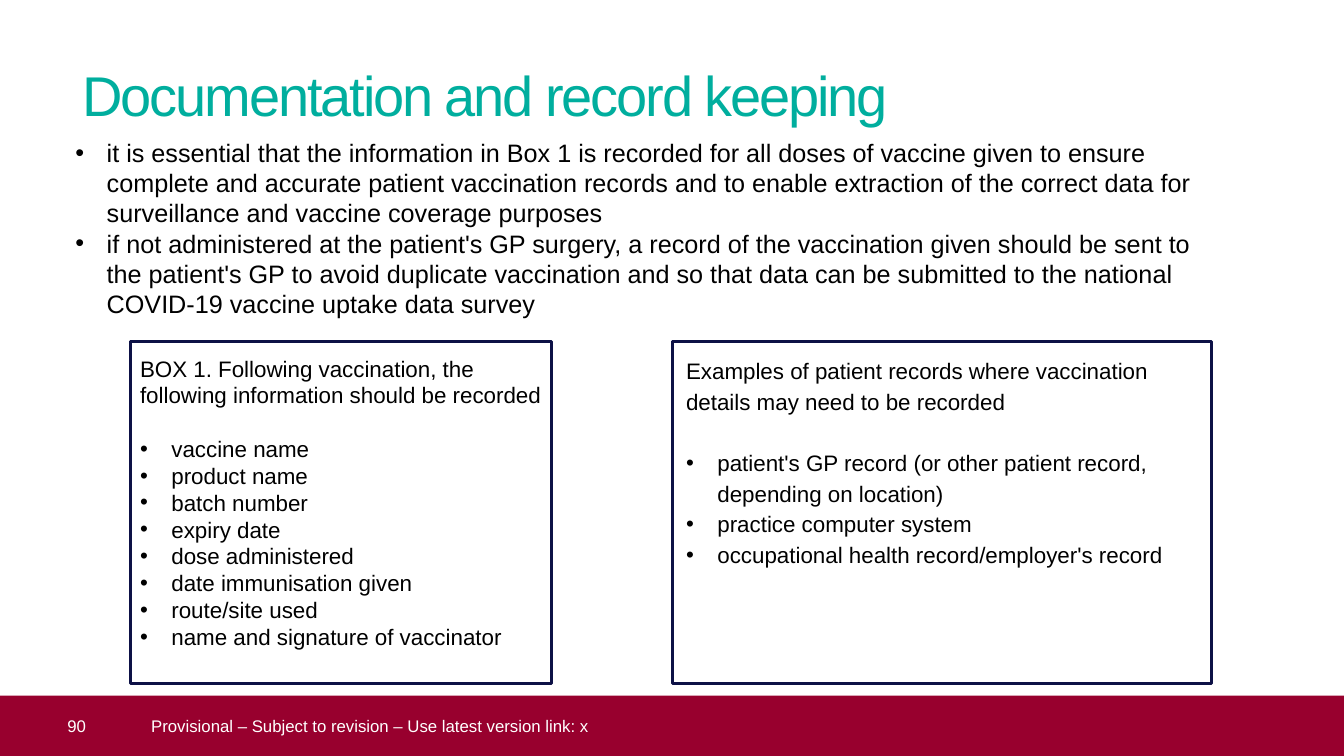
from pptx import Presentation
from pptx.dml.color import RGBColor as Rgb
from pptx.enum.shapes import MSO_SHAPE as Kind
from pptx.enum.text import MSO_ANCHOR as Anchor
from pptx.oxml.xmlchemy import OxmlElement as Node
from pptx.util import Cm, Pt

INK = "000000"
INDENT = 0.79


def color(code):
    return Rgb.from_string(code)


def frame(slide, box, pad=(0, 0)):
    text = slide.shapes.add_textbox(*map(Cm, box)).text_frame
    text.word_wrap = True
    text.margin_left = text.margin_right = Cm(pad[0])
    text.margin_top = text.margin_bottom = Cm(pad[1])
    return text


def rect(slide, box):
    shape = slide.shapes.add_shape(Kind.RECTANGLE, *map(Cm, box))
    shape.shadow.inherit = False
    return shape


def write(text, lines, size, code=INK, mark=False, space=None):
    for line in lines:
        first = text.paragraphs[0]
        para = text.add_paragraph() if first.runs else first
        para.text = line
        para.font.name = "Arial"
        para.font.size = Pt(size)
        para.font.color.rgb = color(code)
        para.line_spacing = space
        if mark:
            props = para._p.get_or_add_pPr()
            props.set("marL", str(Cm(INDENT)))
            props.set("indent", str(-Cm(INDENT)))
            face = Node("a:buFont")
            face.set("typeface", "Arial")
            dot = Node("a:buChar")
            dot.set("char", "•")
            for node in (face, dot):
                props.insert_element_before(node, "a:tabLst", "a:defRPr", "a:extLst")


def title(slide, box, words):
    text = frame(slide, box)
    write(text, [words], 40, "00AE9E")
    text.paragraphs[0].runs[0].font._element.set("spc", "-150")


def intro(slide, box, points):
    write(frame(slide, box, (0.25, 0.13)), points, 18, mark=True)


def panel(slide, box, inset, pad, head, points, gap, space=None):
    left, top, width, height = box
    text = frame(slide, (left + inset[0], top + inset[1],
                         width - inset[2], height - inset[1]), pad)
    write(text, [head], 16, space=space)
    text.paragraphs[0].space_after = Pt(gap)
    write(text, points, 16, mark=True, space=space)
    edge = rect(slide, box)
    edge.fill.background()
    edge.line.color.rgb = color("0D1146")
    edge.line.width = Pt(2)


def footer(slide, box, number, note):
    left, top, width, height = box
    bar = rect(slide, box)
    bar.fill.solid()
    bar.fill.fore_color.rgb = color("98002E")
    bar.line.fill.background()
    for start, words in ((1.7, number), (3.81, note)):
        text = frame(slide, (left + start, top, width - start, height))
        text.vertical_anchor = Anchor.MIDDLE
        write(text, [words], 12, "FFFFFF")


def main():
    deck = Presentation()
    deck.slide_width, deck.slide_height = Cm(33.87), Cm(19.05)
    slide = deck.slides.add_slide(deck.slide_layouts[6])
    title(slide, (2.08, 1.52, 29.74, 1.8), "Documentation and record keeping")
    footer(slide, (0, 17.53, 33.87, 1.52), "90",
           "Provisional – Subject to revision – Use latest version link: x")
    intro(slide, (1.65, 3.33, 28.88, 4.88), [
        "it is essential that the information in Box 1 is recorded for all doses of "
        "vaccine given to ensure complete and accurate patient vaccination records "
        "and to enable extraction of the correct data for surveillance and vaccine "
        "coverage purposes",
        "if not administered at the patient's GP surgery, a record of the vaccination "
        "given should be sent to the patient's GP to avoid duplicate vaccination and "
        "so that data can be submitted to the national COVID-19 vaccine uptake data "
        "survey",
    ])
    panel(slide, (3.28, 8.61, 10.62, 8.61), (0, 0.2, -0.07), (0.25, 0.13),
          "BOX 1. Following vaccination, the following information should be recorded",
          ["vaccine name", "product name", "batch number", "expiry date",
           "dose administered", "date immunisation given", "route/site used",
           "name and signature of vaccinator"], 19)
    panel(slide, (16.94, 8.61, 13.59, 8.61), (0.35, 0.3, 0.69), (0, 0),
          "Examples of patient records where vaccination details may need to be recorded",
          ["patient's GP record (or other patient record, depending on location)",
           "practice computer system",
           "occupational health record/employer's record"], 22, 1.14)
    deck.save("out.pptx")


if __name__ == "__main__":
    main()
